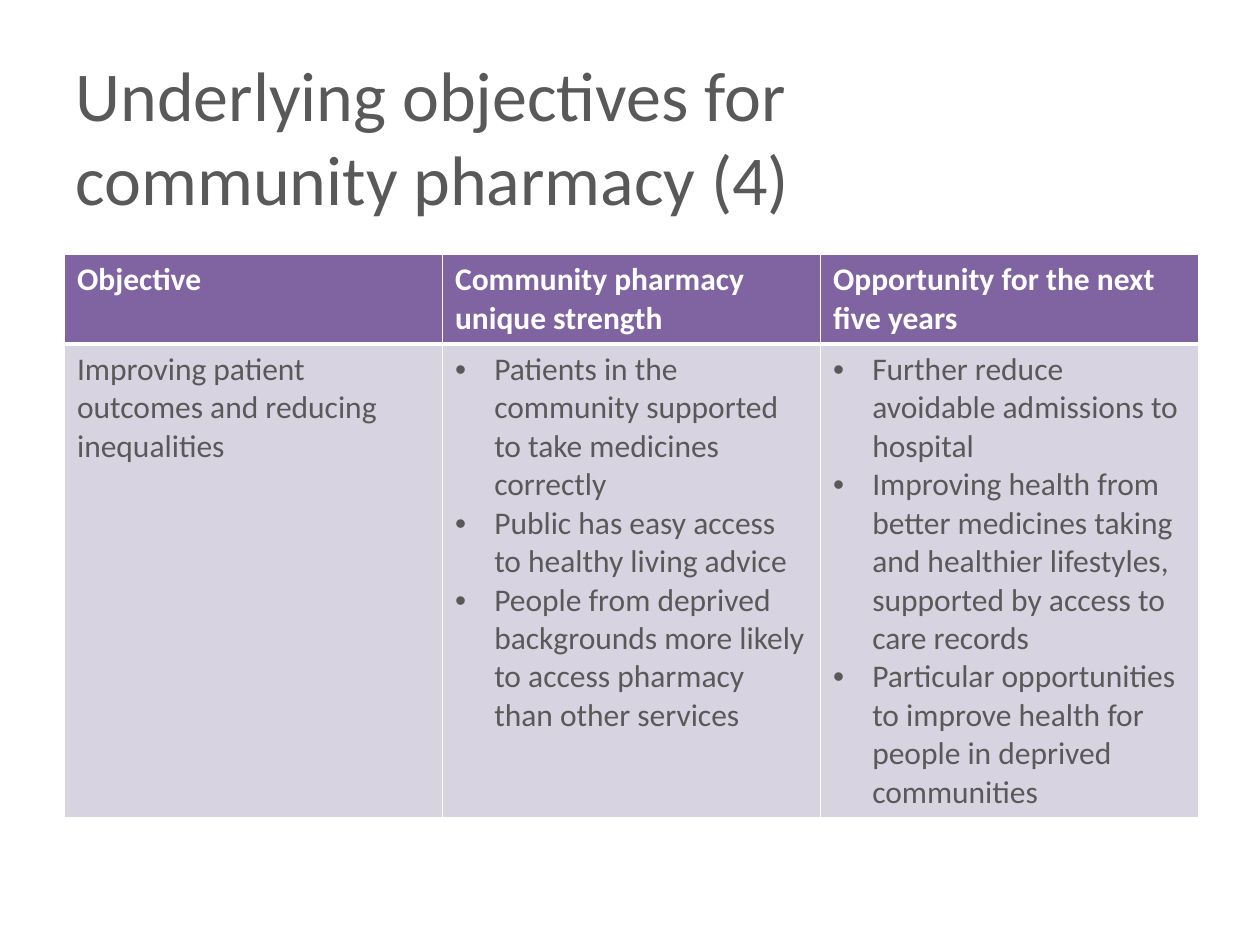
"""Build the slide on underlying objectives for community pharmacy."""
from dataclasses import dataclass

from lxml import etree
from pptx import Presentation
from pptx import util as u
from pptx.dml.color import RGBColor
from pptx.enum import text
from pptx.oxml import ns


@dataclass(frozen=True)
class Theme:
    """Hold the colours, type sizes and font of the slide."""
    ink: str = "595959"
    white: str = "FFFFFF"
    head: str = "8064A2"
    body: str = "D8D3E0"
    font: str = "Calibri"
    title: int = 40
    cell: int = 18


THEME = Theme()
TITLE = "Underlying objectives for community pharmacy (4)"
HEADS = [
    "Objective",
    "Community pharmacy unique strength",
    "Opportunity for the next five years",
]
AIM = ["Improving patient outcomes and reducing inequalities"]
POWERS = [
    "Patients in the community supported to take medicines correctly",
    "Public has easy access to healthy living advice",
    "People from deprived backgrounds more likely to access pharmacy than other services",
]
CHANCES = [
    "Further reduce avoidable admissions to hospital",
    "Improving health from better medicines taking and healthier lifestyles, "
    "supported by access to care records",
    "Particular opportunities to improve health for people in deprived communities",
]


def add_run(para, words, size, color, bold=False):
    """Add one styled run to a paragraph."""
    run = para.add_run()
    run.text = words
    font = run.font
    font.name, font.size, font.bold = THEME.font, u.Pt(size), bold
    font.color.rgb = RGBColor.from_string(color)


def add_bullet(para):
    """Give a paragraph a round bullet and a hanging indent."""
    props = para._p.get_or_add_pPr()
    dent = u.Cm(0.79)
    props.set("marL", str(dent))
    props.set("indent", str(-dent))
    face = etree.SubElement(props, ns.qn("a:buFont"))
    face.set("typeface", "Arial")
    etree.SubElement(props, ns.qn("a:buChar")).set("char", "•")


def add_edges(cell, top, base):
    """Draw white borders around a cell, with widths in points."""
    props = cell._tc.get_or_add_tcPr()
    for side, width in (("L", 1), ("R", 1), ("T", top), ("B", base)):
        line = etree.SubElement(props, ns.qn(f"a:ln{side}"), w=str(u.Pt(width)))
        fill = etree.SubElement(line, ns.qn("a:solidFill"))
        etree.SubElement(fill, ns.qn("a:srgbClr")).set("val", THEME.white)


def fill_cell(cell, items, is_head, listed):
    """Fill, border and write one table cell."""
    add_edges(cell, *((1, 3) if is_head else (3, 1)))
    cell.fill.solid()
    cell.fill.fore_color.rgb = RGBColor.from_string(THEME.head if is_head else THEME.body)
    frame = cell.text_frame
    for i, item in enumerate(items):
        para = frame.add_paragraph() if i else frame.paragraphs[0]
        if listed:
            add_bullet(para)
        add_run(para, item, THEME.cell, THEME.white if is_head else THEME.ink, is_head)


def add_title(slide):
    """Place and write the slide title."""
    title = slide.shapes.title
    title.left, title.top = u.Cm(1.27), u.Cm(0.76)
    title.width, title.height = u.Cm(16.23), u.Cm(3.96)
    frame = title.text_frame
    frame.word_wrap = True
    frame.auto_size = text.MSO_AUTO_SIZE.NONE
    frame.vertical_anchor = text.MSO_ANCHOR.MIDDLE
    para = frame.paragraphs[0]
    para.alignment = text.PP_ALIGN.LEFT
    add_run(para, TITLE, THEME.title, THEME.ink)


def add_grid(slide):
    """Add the table of objectives, strengths and opportunities."""
    rows = [[[head] for head in HEADS], [AIM, POWERS, CHANCES]]
    high = [u.Cm(1.78), u.Cm(9.4)]
    wide = u.Cm(7.62)
    grid = slide.shapes.add_table(
        len(rows), len(HEADS), u.Cm(1.3), u.Cm(5.13), wide * len(HEADS), sum(high)
    ).table
    for col in grid.columns:
        col.width = wide
    for r, row in enumerate(rows):
        grid.rows[r].height = high[r]
        for c, items in enumerate(row):
            fill_cell(grid.cell(r, c), items, r == 0, len(items) > 1)


def main():
    """Build and save the slide."""
    deck = Presentation()
    deck.slide_width, deck.slide_height = u.Cm(25.4), u.Cm(19.05)
    slide = deck.slides.add_slide(deck.slide_layouts.get_by_name("Title Only"))
    add_title(slide)
    add_grid(slide)
    deck.save("out.pptx")


if __name__ == "__main__":
    main()
